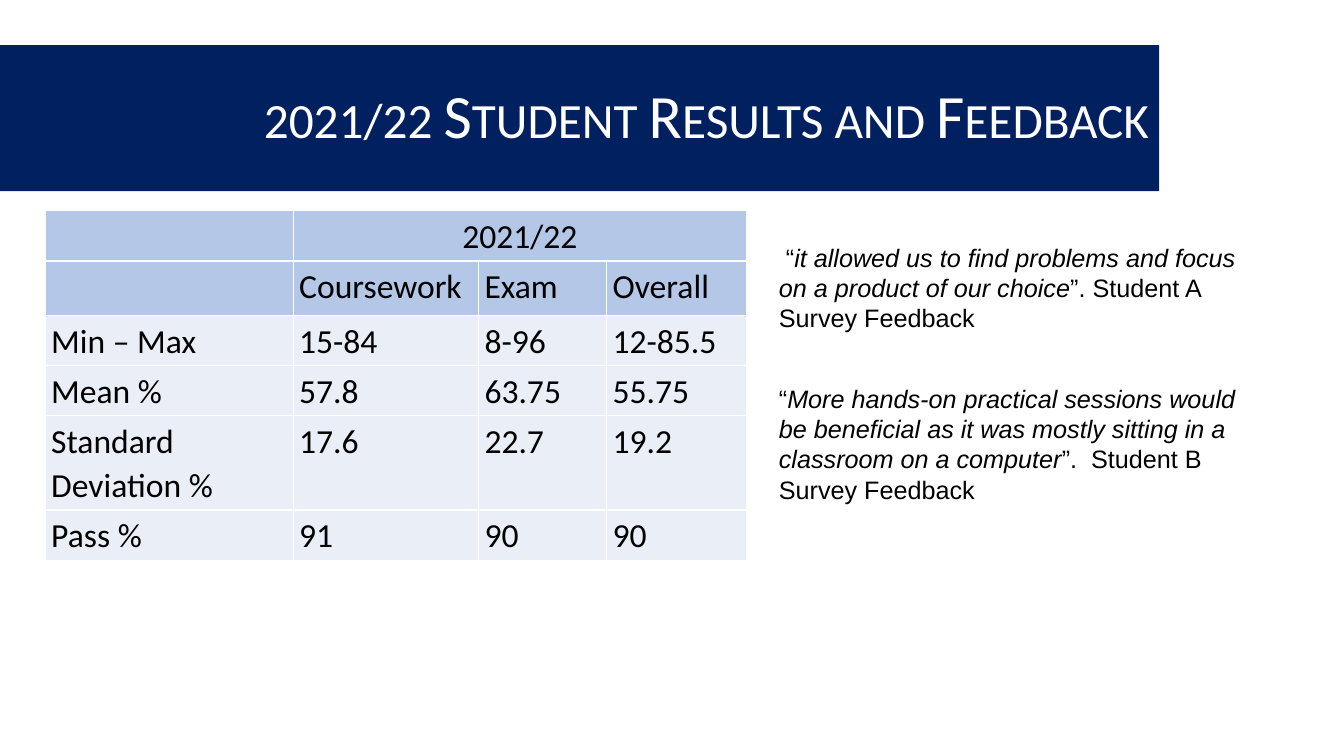
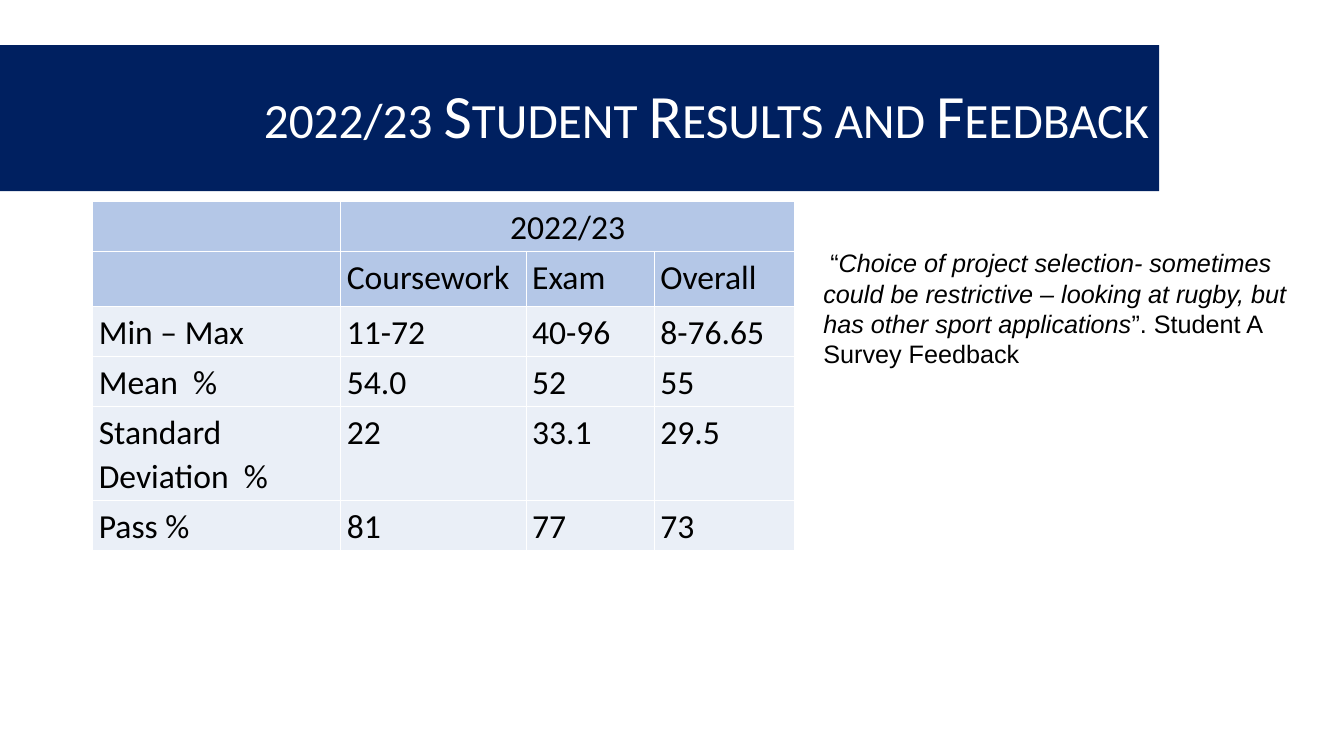
from dataclasses import dataclass

from lxml import etree
from pptx import Presentation
from pptx.dml.color import RGBColor
from pptx.enum.text import MSO_ANCHOR, MSO_AUTO_SIZE, PP_ALIGN
from pptx.oxml.ns import qn
from pptx.presentation import Presentation as Deck
from pptx.slide import Slide
from pptx.table import _Cell as Cell
from pptx.text.text import _Paragraph as Paragraph
from pptx.util import Cm, Pt

LEFT, CENTER, RIGHT = PP_ALIGN.LEFT, PP_ALIGN.CENTER, PP_ALIGN.RIGHT
MIDDLE = MSO_ANCHOR.MIDDLE
NO_AUTO_SIZE = MSO_AUTO_SIZE.NONE
TITLE_ONLY = 5


@dataclass(frozen=True)
class Theme:
    band: RGBColor = RGBColor(0x00, 0x20, 0x60)
    header: RGBColor = RGBColor(0xB4, 0xC7, 0xE7)
    body: RGBColor = RGBColor(0xEA, 0xEF, 0xF7)
    text: RGBColor = RGBColor(0x00, 0x00, 0x00)
    white: RGBColor = RGBColor(0xFF, 0xFF, 0xFF)
    heading_font: str = "Calibri"
    quote_font: str = "Arial"
    title_size: int = 44
    table_size: int = 24
    quote_size: int = 18


@dataclass(frozen=True)
class Quote:
    """A student quotation; left, top, width and height are in centimetres."""
    opening: str
    words: str
    source: str
    left: float
    top: float
    width: float
    height: float


@dataclass(frozen=True)
class YearResults:
    """One year's slide; the table position is in centimetres."""
    year: str
    table_left: float
    table_top: float
    rows: tuple[tuple[str, ...], ...]
    quotes: tuple[Quote, ...]


THEME = Theme()
COLUMN_WIDTHS = (6.25, 4.67, 3.23, 3.53)
ROW_HEIGHTS = (0.74, 1.37, 0.74, 0.74, 1.37, 0.74)
COLUMN_HEADINGS = ("", "Coursework", "Exam", "Overall")
HEADER_ROWS = 2

YEARS = (
    YearResults(
        "2021/22", 1.14, 5.31,
        (
            ("Min – Max", "15-84", "8-96", "12-85.5"),
            ("Mean %", "57.8", "63.75", "55.75"),
            ("Standard Deviation %", "17.6", "22.7", "19.2"),
            ("Pass %", "91", "90", "90"),
        ),
        (
            Quote(" “", "it allowed us to find problems and focus on a product of our choice",
                  "”. Student A Survey Feedback", 19.38, 5.97, 12.7, 2.57),
            Quote("“", "More hands-on practical sessions would be beneficial as it was "
                  "mostly sitting in a classroom on a computer",
                  "”.  Student B Survey Feedback", 19.38, 9.53, 12.4, 3.33),
        ),
    ),
    YearResults(
        "2022/23", 2.34, 5.08,
        (
            ("Min – Max", "11-72", "40-96", "8-76.65"),
            ("Mean  %", "54.0", "52", "55"),
            ("Standard Deviation  %", "22", "33.1", "29.5"),
            ("Pass %", "81", "77", "73"),
        ),
        (
            Quote(" “", "Choice of project selection- sometimes could be restrictive – "
                  "looking at rugby, but has other sport applications",
                  "”. Student A Survey Feedback", 20.5, 6.12, 12.7, 3.33),
        ),
    ),
)


def add_text(paragraph: Paragraph, text: str, *, font: str, size: int,
             color: RGBColor = THEME.text, italic: bool = False,
             small_caps: bool = False, align: PP_ALIGN = LEFT,
             line_spacing: float = 1.0, space_after: float = 0) -> None:
    """Append a formatted run and set the format of its paragraph."""
    paragraph.alignment = align
    paragraph.line_spacing = line_spacing
    paragraph.space_before = Pt(0)
    paragraph.space_after = Pt(space_after)
    run = paragraph.add_run()
    run.text = text
    run.font.name = font
    run.font.size = Pt(size)
    run.font.bold = False
    run.font.italic = italic
    run.font.color.rgb = color
    if small_caps:
        run.font._element.set("cap", "small")


def add_title(slide: Slide, text: str) -> None:
    title = slide.shapes.title
    title.left, title.top = Cm(0), Cm(1.14)
    title.width, title.height = Cm(29.21), Cm(3.68)
    title.fill.solid()
    title.fill.fore_color.rgb = THEME.band
    frame = title.text_frame
    frame.auto_size = NO_AUTO_SIZE
    frame.word_wrap = True
    frame.vertical_anchor = MIDDLE
    add_text(frame.paragraphs[0], text, font=THEME.heading_font,
             size=THEME.title_size, color=THEME.white, small_caps=True,
             align=RIGHT, line_spacing=0.9)


def set_borders(cell: Cell, color: RGBColor, width: float) -> None:
    properties = cell._tc.get_or_add_tcPr()
    for side in ("a:lnL", "a:lnR", "a:lnT", "a:lnB"):
        line = etree.SubElement(properties, qn(side), w=str(Pt(width)))
        fill = etree.SubElement(line, qn("a:solidFill"))
        etree.SubElement(fill, qn("a:srgbClr"), val=str(color))


def format_cell(cell: Cell, text: str, fill: RGBColor, align: PP_ALIGN) -> None:
    cell.margin_left = cell.margin_right = Cm(0.15)
    cell.margin_top = cell.margin_bottom = Cm(0.08)
    set_borders(cell, THEME.white, 1)
    cell.fill.solid()
    cell.fill.fore_color.rgb = fill
    if text:
        add_text(cell.text_frame.paragraphs[0], text, font=THEME.heading_font,
                 size=THEME.table_size, align=align, line_spacing=1.07,
                 space_after=8)


def add_results_table(slide: Slide, results: YearResults) -> None:
    rows = (("", results.year, "", ""), COLUMN_HEADINGS, *results.rows)
    table = slide.shapes.add_table(
        len(rows), len(COLUMN_WIDTHS),
        Cm(results.table_left), Cm(results.table_top),
        Cm(sum(COLUMN_WIDTHS)), Cm(sum(ROW_HEIGHTS)),
    ).table
    table.first_row = table.horz_banding = False
    for column, width in zip(table.columns, COLUMN_WIDTHS):
        column.width = Cm(width)
    for row, height in zip(table.rows, ROW_HEIGHTS):
        row.height = Cm(height)
    table.cell(0, 1).merge(table.cell(0, 3))
    for row_index, texts in enumerate(rows):
        fill = THEME.header if row_index < HEADER_ROWS else THEME.body
        align = CENTER if row_index == 0 else LEFT
        for column_index, text in enumerate(texts):
            format_cell(table.cell(row_index, column_index), text, fill, align)


def add_quote(slide: Slide, quote: Quote) -> None:
    box = slide.shapes.add_textbox(Cm(quote.left), Cm(quote.top),
                                   Cm(quote.width), Cm(quote.height))
    box.text_frame.word_wrap = True
    paragraph = box.text_frame.paragraphs[0]
    for text, italic in ((quote.opening, False), (quote.words, True),
                         (quote.source, False)):
        add_text(paragraph, text, font=THEME.quote_font,
                 size=THEME.quote_size, italic=italic)


def add_results_slide(presentation: Deck, results: YearResults) -> None:
    slide = presentation.slides.add_slide(presentation.slide_layouts[TITLE_ONLY])
    add_title(slide, f"{results.year} Student Results and Feedback")
    add_results_table(slide, results)
    for quote in results.quotes:
        add_quote(slide, quote)


def main() -> None:
    presentation = Presentation()
    presentation.slide_width = Cm(33.87)
    presentation.slide_height = Cm(19.05)
    for results in YEARS:
        add_results_slide(presentation, results)
    presentation.save("out.pptx")


if __name__ == "__main__":
    main()
